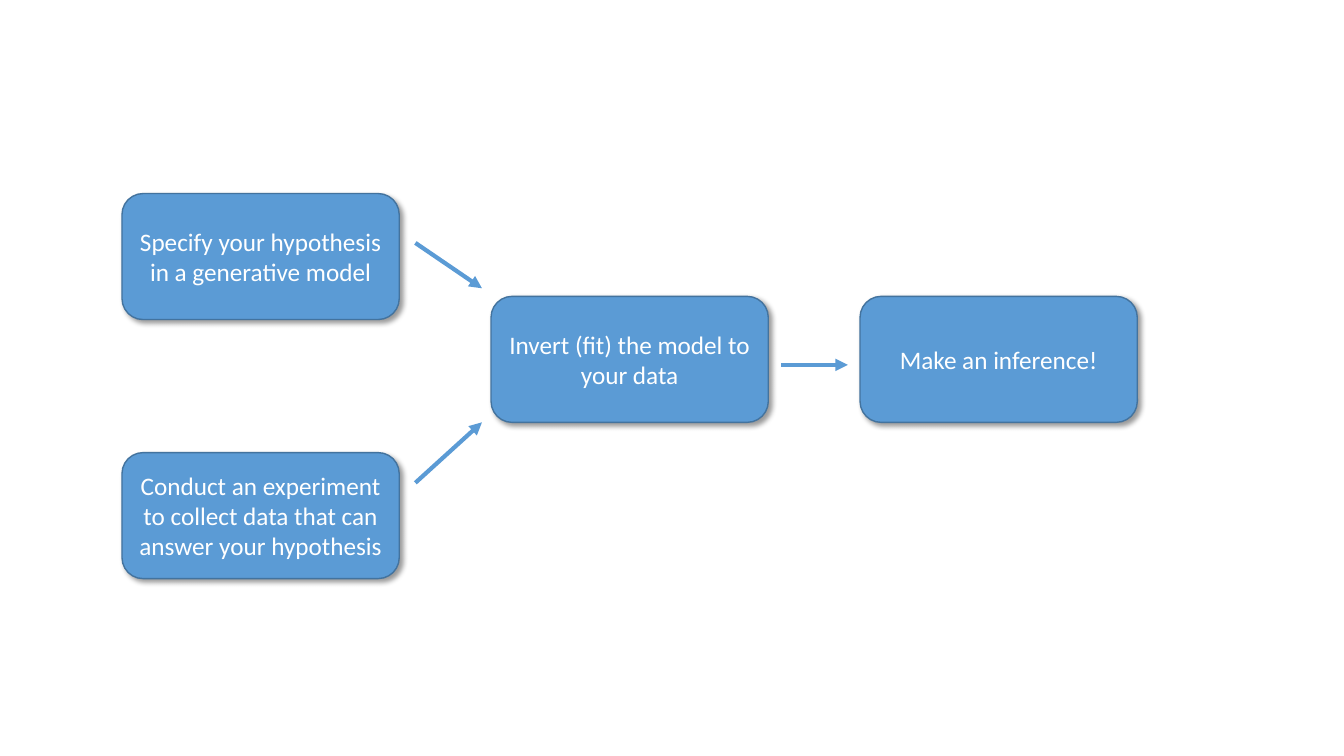
from lxml import etree
from pptx import Presentation
from pptx import util as u
from pptx.dml.color import RGBColor
from pptx.enum import shapes, text
from pptx.oxml import parse_xml
from pptx.oxml.ns import nsdecls, qn

SCALE = 9144  # EMU in one px, at 100 px to the inch
BLUE, EDGE, WHITE = "5B9BD5", "43739E", "FFFFFF"
FONT = {"name": "Calibri", "size": u.Pt(18)}
FRAME = {"word_wrap": True, "vertical_anchor": text.MSO_ANCHOR.MIDDLE}

# Steps of the flow: column, top, wording
LEFT, PITCH, WIDE, HIGH = 121, 366, 275, 125
STEPS = [
    (0, 192, "Specify your hypothesis in a generative model"),
    (0, 449, "Conduct an experiment to collect data that can answer your hypothesis"),
    (1, 294, "Invert (fit) the model to your data"),
    (2, 294, "Make an inference!"),
]
# Arrows between the steps: x1, y1, x2, y2
ARROWS = [
    (412, 241, 478, 286),
    (412, 479, 478, 419),
    (775, 362, 841, 362),
]
SHADOW = (
    f'<a:outerShdw {nsdecls("a")} blurRad="50800" dist="38100" dir="2700000" '
    'algn="tl" rotWithShape="0"><a:srgbClr val="000000">'
    '<a:alpha val="40000"/></a:srgbClr></a:outerShdw>'
)


def px(*vals):
    return [u.Emu(val * SCALE) for val in vals]


def tint(code):
    return RGBColor.from_string(code)


def style(part, vals):
    for key, val in vals.items():
        setattr(part, key, val)


def add_step(slide, col, top, words):
    box = slide.shapes.add_shape(
        shapes.MSO_SHAPE.ROUNDED_RECTANGLE,
        *px(LEFT + col * PITCH, top, WIDE, HIGH))
    box.fill.solid()
    box.fill.fore_color.rgb = tint(BLUE)
    box.line.color.rgb = tint(EDGE)
    box.line.width = u.Pt(1)
    # Soft shadow to the lower right
    box.shadow.inherit = False
    box.element.spPr.find(qn("a:effectLst")).append(parse_xml(SHADOW))
    # Centred label
    style(box.text_frame, FRAME)
    para = box.text_frame.paragraphs[0]
    para.alignment = text.PP_ALIGN.CENTER
    run = para.add_run()
    run.text = words
    style(run.font, FONT)
    run.font.color.rgb = tint(WHITE)


def add_arrow(slide, *ends):
    link = slide.shapes.add_connector(
        shapes.MSO_CONNECTOR.STRAIGHT, *px(*ends))
    link.line.color.rgb = tint(BLUE)
    link.line.width = u.Pt(3)
    etree.SubElement(link.line._get_or_add_ln(), qn("a:tailEnd"), type="triangle")
    etree.SubElement(link.element.spPr, qn("a:effectLst"))


def main():
    deck = Presentation()
    deck.slide_width, deck.slide_height = px(1333, 750)
    slide = deck.slides.add_slide(deck.slide_layouts[6])
    for step in STEPS:
        add_step(slide, *step)
    for ends in ARROWS:
        add_arrow(slide, *ends)
    deck.save("out.pptx")


if __name__ == "__main__":
    main()
